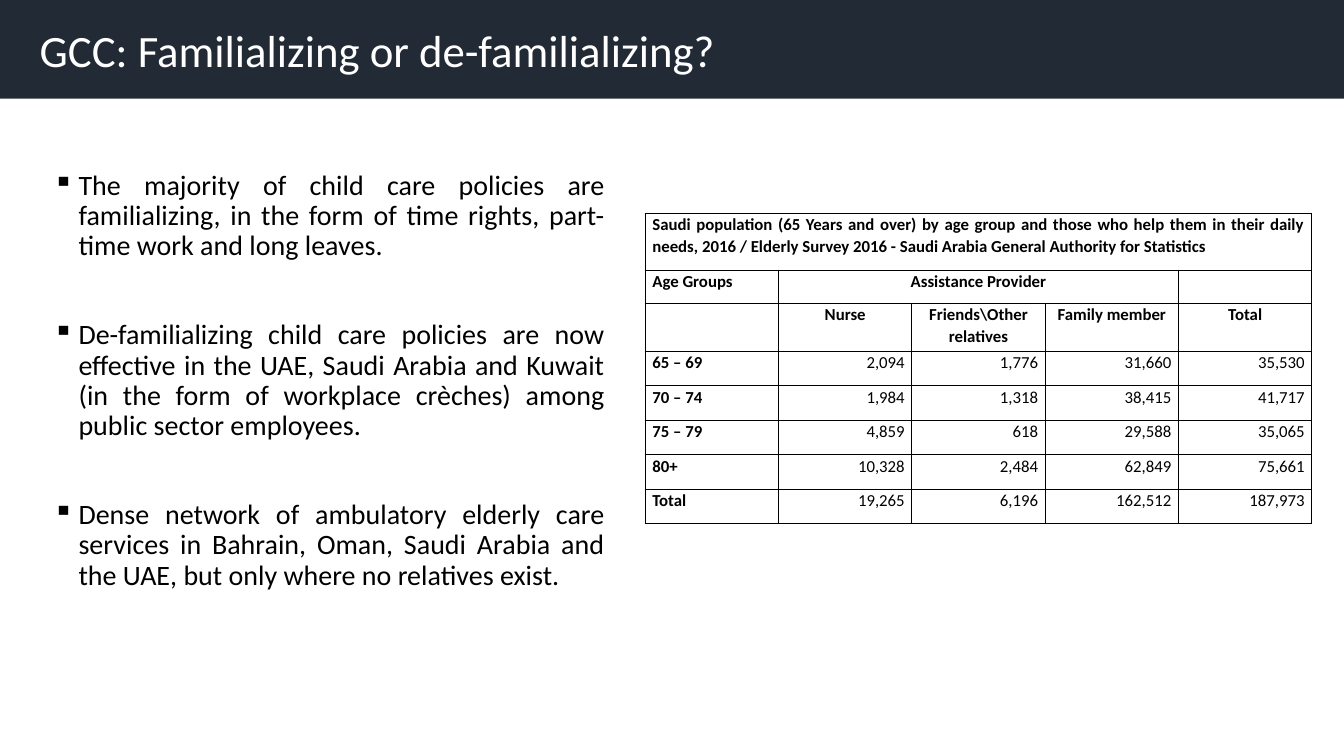
from dataclasses import dataclass

from lxml.etree import SubElement
from pptx import Presentation
from pptx.dml.color import RGBColor
from pptx.enum.shapes import MSO_SHAPE
from pptx.enum.text import MSO_ANCHOR, PP_ALIGN as Align
from pptx.oxml.ns import qn
from pptx.util import Cm, Pt

NAVY = RGBColor(0x22, 0x2A, 0x35)
WHITE = RGBColor(0xFF, 0xFF, 0xFF)
BLACK = RGBColor(0, 0, 0)
FONT = "Calibri"


@dataclass
class Bullet:
    text: str
    space_before: float = 42


@dataclass
class TableCell:
    text: str = ""
    align: Align = Align.LEFT
    bold: bool = True
    span: int = 1


@dataclass
class TableRow:
    height: float
    cells: list[TableCell]


def heading(text: str, span: int = 1) -> TableCell:
    return TableCell(text, Align.CENTER, span=span)


def data_row(label: str, *values: int) -> TableRow:
    numbers = [TableCell(f"{v:,}", Align.RIGHT, bold=False) for v in values]
    return TableRow(0.87, [TableCell(label), *numbers])


BULLETS = [
    Bullet("The majority of child care policies are familializing, in the form of "
           "time rights, part-time work and long leaves.", 0),
    Bullet("De-familializing child care policies are now effective in the UAE, "
           "Saudi Arabia and Kuwait (in the form of workplace crèches) among "
           "public sector employees."),
    Bullet("Dense network of ambulatory elderly care services in Bahrain, Oman, "
           "Saudi Arabia and the UAE, but only where no relatives exist."),
]

ROWS = [
    TableRow(1.43, [TableCell(
        "Saudi population (65 Years and over) by age group and those who help them "
        "in their daily needs, 2016 / Elderly Survey 2016 - Saudi Arabia General "
        "Authority for Statistics", Align.JUSTIFY, span=5)]),
    TableRow(0.84, [TableCell("Age Groups"), heading("Assistance Provider", 3),
                    TableCell()]),
    TableRow(1.2, [TableCell(), heading("Nurse"), heading("Friends\\Other relatives"),
                   heading("Family member"), heading("Total")]),
    data_row("65 – 69", 2094, 1776, 31660, 35530),
    data_row("70 – 74", 1984, 1318, 38415, 41717),
    data_row("75 – 79", 4859, 618, 29588, 35065),
    data_row("80+", 10328, 2484, 62849, 75661),
    data_row("Total", 19265, 6196, 162512, 187973),
]


def style_font(p, size: float, color: RGBColor, bold: bool = False) -> None:
    p.font.name = FONT
    p.font.size = Pt(size)
    p.font.color.rgb = color
    p.font.bold = bold


def add_bullets(s, bullets: list[Bullet]) -> None:
    tf = s.shapes.add_textbox(Cm(1.09), Cm(4.19), Cm(14.4), Cm(12.09)).text_frame
    tf.word_wrap = True
    for i, bullet in enumerate(bullets):
        p = tf.add_paragraph() if i else tf.paragraphs[0]
        p.text = bullet.text
        p.alignment = Align.JUSTIFY
        p.line_spacing = 0.9
        p.space_before = Pt(bullet.space_before)
        style_font(p, 20, BLACK)
        pPr = p._p.get_or_add_pPr()
        pPr.set("marL", str(Cm(0.64)))
        pPr.set("indent", str(-Cm(0.64)))
        mark = pPr.makeelement(qn("a:buChar"), {"char": "▪"})
        pPr.find(qn("a:defRPr")).addprevious(mark)


def add_borders(cell) -> None:
    tcPr = cell._tc.get_or_add_tcPr()
    for side in ("lnL", "lnR", "lnT", "lnB"):
        ln = SubElement(tcPr, qn(f"a:{side}"), w=str(Pt(1)))
        fill = SubElement(ln, qn("a:solidFill"))
        SubElement(fill, qn("a:srgbClr"), val=str(BLACK))


def format_cell(cell, content: TableCell) -> None:
    cell.margin_left = cell.margin_right = Cm(0.18)
    cell.margin_top = cell.margin_bottom = 0
    p = cell.text_frame.paragraphs[0]
    p.text = content.text
    p.alignment = content.align
    p.line_spacing = 1.07
    style_font(p, 12, BLACK, content.bold)
    add_borders(cell)
    cell.fill.solid()
    cell.fill.fore_color.rgb = WHITE


def add_population_table(s, rows: list[TableRow]) -> None:
    height = sum(row.height for row in rows)
    table = s.shapes.add_table(len(rows), 5, Cm(16.26), Cm(5.38),
                               Cm(16.8), Cm(height)).table
    table.first_row = table.horz_banding = False
    for column in table.columns:
        column.width = Cm(3.36)
    for i, row in enumerate(rows):
        table.rows[i].height = Cm(row.height)
        col = 0
        for content in row.cells:
            last = col + content.span - 1
            format_cell(table.cell(i, col), content)
            for covered in range(col + 1, last + 1):
                format_cell(table.cell(i, covered), TableCell())
            if content.span > 1:
                table.cell(i, col).merge(table.cell(i, last))
            col = last + 1


def add_title_bar(s, text: str, width: int) -> None:
    sp = s.shapes.add_shape(MSO_SHAPE.RECTANGLE, 0, 0, width, Cm(2.49))
    sp.shadow.inherit = False
    sp.fill.solid()
    sp.fill.fore_color.rgb = NAVY
    sp.line.fill.background()
    tf = sp.text_frame
    tf.word_wrap = True
    tf.vertical_anchor = MSO_ANCHOR.MIDDLE
    tf.margin_left = Cm(1)
    p = tf.paragraphs[0]
    p.text = text
    p.alignment = Align.LEFT
    style_font(p, 32, WHITE)


def main() -> None:
    prs = Presentation()
    prs.slide_width, prs.slide_height = Cm(33.87), Cm(19.05)
    s = prs.slides.add_slide(prs.slide_layouts[6])
    add_bullets(s, BULLETS)
    add_population_table(s, ROWS)
    add_title_bar(s, "GCC: Familializing or de-familializing?", prs.slide_width)
    prs.save("out.pptx")


if __name__ == "__main__":
    main()
